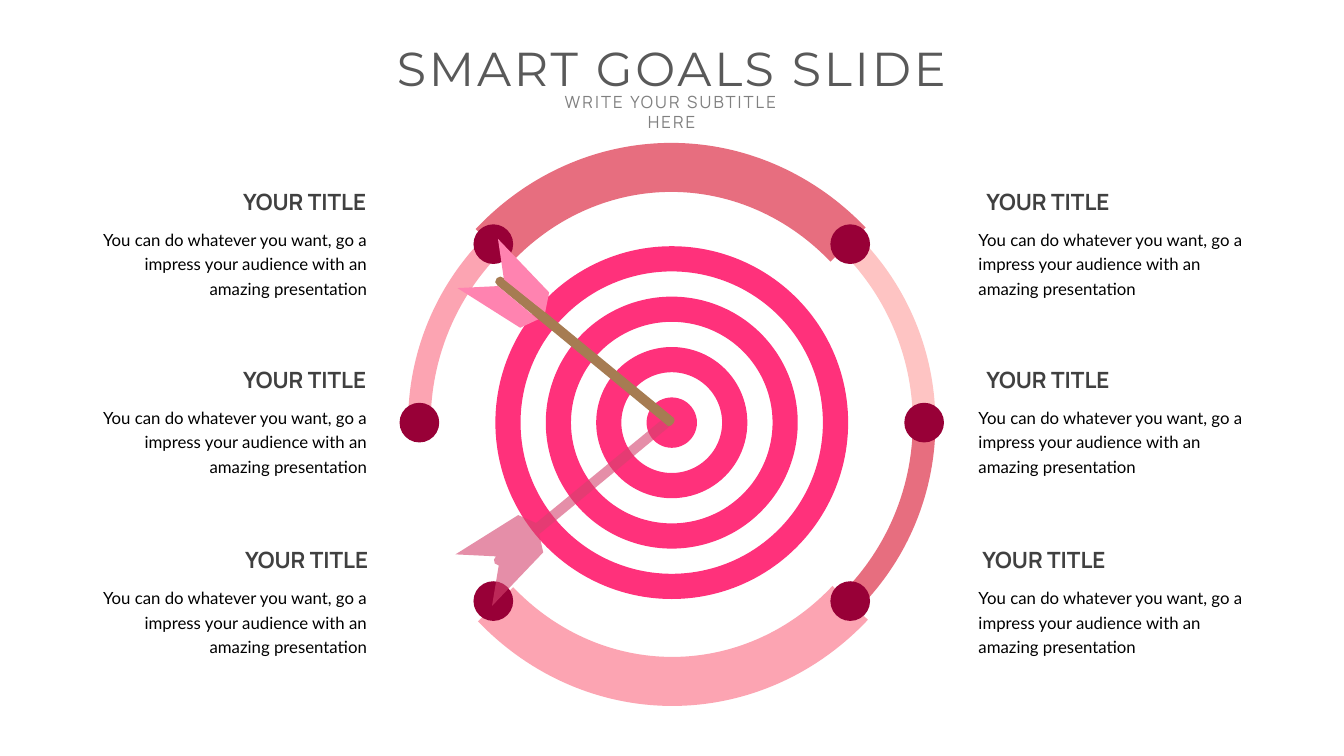
import math
from dataclasses import dataclass

import pptx
import pptx.dml.color
import pptx.enum.shapes
import pptx.enum.text
import pptx.oxml.xmlchemy
import pptx.util
from lxml import etree
from pptx.oxml import ns

Cm = pptx.util.Cm
Pt = pptx.util.Pt
SHAPE = pptx.enum.shapes.MSO_SHAPE
ALIGN = pptx.enum.text.PP_ALIGN
ANCHOR = pptx.enum.text.MSO_ANCHOR
AUTO_SIZE = pptx.enum.text.MSO_AUTO_SIZE


@dataclass(frozen=True)
class Theme:
    heading: str = "595959"
    subtitle: str = "808080"
    goal: str = "404040"
    body: str = "000000"
    target: str = "FF317B"
    rose: str = "E76E7F"
    blush: str = "FCA4B2"
    pale: str = "FEC4C3"
    dot: str = "980037"
    arrow_shadow: str = "D4436E"
    shaft: str = "A67C52"
    feather: str = "FF83B0"
    heading_size: int = 34
    goal_size: int = 16
    body_size: int = 12
    body_leading: float = 17.5
    heading_font: str = "Montserrat"
    accent_font: str = "Manrope"
    body_font: str = "Lato"


THEME = Theme()
CENTER = (16.93, 10.65)
ORBIT_RADIUS = 6.36
ORBIT_BAND = 0.57
RING_STEP = 1.27

GOAL = "YOUR TITLE"
DETAIL = ("You can do whatever you want, go a impress your audience "
          "with an amazing presentation")
GOAL_ROWS = [(4.6, 5.82, 24.61), (9.09, 5.82, 24.61), (13.64, 5.87, 24.51)]

SHAFT = [(16.99, 10.54), (12.7, 7.01), (12.61, 6.97), (12.52, 7.01),
         (12.48, 7.11), (12.55, 7.21), (16.84, 10.74), (16.92, 10.72),
         (16.97, 10.67), (17, 10.6)]
LOWER_FEATHER = [(12.55, 7.21), (13.56, 8.05), (13.11, 8.26), (11.53, 7.26)]
UPPER_FEATHER = [(12.55, 6.02), (13.84, 7.37), (13.74, 7.87), (12.7, 7.04)]
ARROW_SHADOW = [(16.94, 10.69), (16.79, 10.49), (13.51, 13.18), (13.06, 12.98),
                (11.48, 13.97), (12.5, 14.02), (12.45, 14.1), (12.47, 14.2),
                (12.57, 14.25), (12.4, 15.27), (13.69, 13.92), (13.59, 13.46)]


def rgb(color):
    return pptx.dml.color.RGBColor.from_string(color)


def paint(shape, color):
    shape.shadow.inherit = False
    shape.fill.solid()
    shape.fill.fore_color.rgb = rgb(color)
    shape.line.fill.background()


def add_round(slide, preset, center, diameter, color, adjustments=()):
    left, top = (middle - diameter / 2 for middle in center)
    disc = slide.shapes.add_shape(preset, Cm(left), Cm(top), Cm(diameter), Cm(diameter))
    for index, value in enumerate(adjustments):
        disc.adjustments[index] = value
    paint(disc, color)


def add_thick_arc(slide, left, top, color, rotation=0):
    arc = slide.shapes.add_shape(SHAPE.ARC, Cm(left), Cm(top), Cm(12.7), Cm(13.56))
    arc.adjustments[0] = 136.17
    arc.adjustments[1] = 187.58
    arc.rotation = rotation
    arc.shadow.inherit = False
    arc.fill.background()
    arc.line.color.rgb = rgb(color)
    arc.line.width = Pt(35)


def add_orbit_segment(slide, start, end, color):
    diameter = 2 * ORBIT_RADIUS + ORBIT_BAND
    add_round(slide, SHAPE.BLOCK_ARC, CENTER, diameter, color,
              (start * 0.6, end * 0.6, ORBIT_BAND / diameter))


def add_outline(slide, contours, color, opacity=100):
    builder = None
    for contour in contours:
        first, *rest = [(Cm(x), Cm(y)) for x, y in contour]
        if builder is None:
            builder = slide.shapes.build_freeform(*first)
        else:
            builder.move_to(*first)
        builder.add_line_segments(rest, close=True)
    outline = builder.convert_to_shape()
    paint(outline, color)
    if opacity < 100:
        tint = outline.fill._xPr.find(".//" + ns.qn("a:srgbClr"))
        etree.SubElement(tint, ns.qn("a:alpha")).set("val", str(opacity * 1000))


def add_text(slide, text, box, font, size, color, align, *, wrap=False, bold=False,
             anchor=ANCHOR.TOP, insets=(0.25, 0.13), leading=None, tracking=0):
    frame = slide.shapes.add_textbox(*map(Cm, box)).text_frame
    frame.word_wrap = wrap
    frame.auto_size = AUTO_SIZE.SHAPE_TO_FIT_TEXT
    frame.vertical_anchor = anchor
    frame.margin_left = frame.margin_right = Cm(insets[0])
    frame.margin_top = frame.margin_bottom = Cm(insets[1])
    paragraph = frame.paragraphs[0]
    paragraph.text = text
    paragraph.alignment = align
    if leading:
        paragraph.line_spacing = Pt(leading)
    paragraph.font.name = font
    paragraph.font.size = Pt(size)
    paragraph.font.bold = bold
    paragraph.font.color.rgb = rgb(color)
    if tracking:
        paragraph.font._rPr.set("spc", str(tracking))


def add_goal(slide, top, goal_left, detail_left, align):
    add_text(slide, GOAL, (goal_left, top, 3.66, 0.94), THEME.accent_font,
             THEME.goal_size, THEME.goal, align, bold=True, anchor=ANCHOR.MIDDLE)
    add_text(slide, DETAIL, (detail_left, top + 0.92, 7.75, 2.16), THEME.body_font,
             THEME.body_size, THEME.body, align, wrap=True, insets=(0.3, 0.15),
             leading=THEME.body_leading)


def add_target(slide):
    for rank in (7, 5, 3):
        add_round(slide, SHAPE.DONUT, CENTER, RING_STEP * rank, THEME.target, (0.5 / rank,))
    add_round(slide, SHAPE.OVAL, CENTER, RING_STEP, THEME.target)


def add_orbit(slide):
    add_orbit_segment(slide, 180, 225, THEME.blush)
    add_orbit_segment(slide, 315, 360, THEME.pale)
    add_orbit_segment(slide, 0, 45, THEME.rose)
    for angle in (225, 180, 135, 45, 0, 315):
        turn = math.radians(angle)
        spot = (CENTER[0] + ORBIT_RADIUS * math.cos(turn),
                CENTER[1] + ORBIT_RADIUS * math.sin(turn))
        add_round(slide, SHAPE.OVAL, spot, 1, THEME.dot)


def main():
    deck = pptx.Presentation()
    deck.slide_width, deck.slide_height = Cm(33.87), Cm(19.05)
    slide = deck.slides.add_slide(deck.slide_layouts[6])

    add_thick_arc(slide, 10.59, 3.61, THEME.blush, rotation=180)
    add_thick_arc(slide, 10.57, 4.22, THEME.rose)
    add_target(slide)
    add_orbit(slide)
    add_outline(slide, [ARROW_SHADOW], THEME.arrow_shadow, opacity=60)
    add_outline(slide, [SHAFT], THEME.shaft)
    add_outline(slide, [LOWER_FEATHER, UPPER_FEATHER], THEME.feather)

    add_text(slide, "SMART GOALS SLIDE", (9.5, 0.84, 14.86, 1.7), THEME.heading_font,
             THEME.heading_size, THEME.heading, ALIGN.CENTER, tracking=200)
    add_text(slide, "WRITE YOUR SUBTITLE HERE", (13.56, 2.18, 6.73, 0.76),
             THEME.accent_font, THEME.body_size, THEME.subtitle, ALIGN.CENTER,
             wrap=True, tracking=150)
    for top, left_goal, right_goal in GOAL_ROWS:
        add_goal(slide, top, left_goal, 1.8, ALIGN.RIGHT)
        add_goal(slide, top, right_goal, 24.36, ALIGN.LEFT)

    deck.save("out.pptx")


if __name__ == "__main__":
    main()
